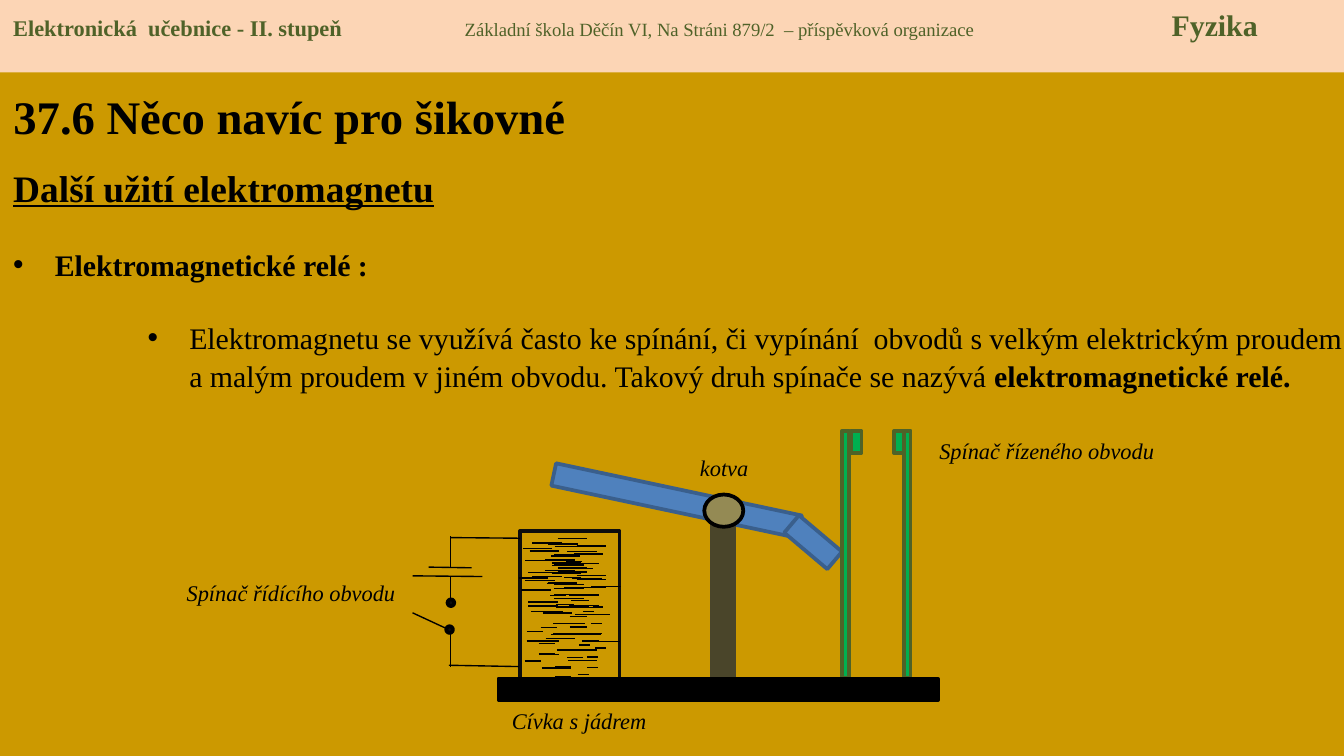
"""Build a physics slide about the electromagnetic relay on a grid of 0.1 inch cells."""
from typing import NamedTuple

from lxml.etree import SubElement
from pptx import Presentation
from pptx.dml.color import RGBColor
from pptx.enum.shapes import MSO_CONNECTOR, MSO_SHAPE
from pptx.enum.text import MSO_ANCHOR, MSO_AUTO_SIZE, PP_ALIGN
from pptx.oxml.ns import qn
from pptx.util import Inches, Pt

RECT = MSO_SHAPE.RECTANGLE
DISC = MSO_SHAPE.FLOWCHART_CONNECTOR
LINE = MSO_CONNECTOR.STRAIGHT
LEFT = PP_ALIGN.LEFT
TOP, MIDDLE = MSO_ANCHOR.TOP, MSO_ANCHOR.MIDDLE
FIXED = MSO_AUTO_SIZE.NONE
COLS, ROWS = 100, 56.25
FONT = "Times New Roman"
BLACK, INK, GOLD, PEACH = "000000", "0D0D0D", "CC9900", "FCD5B5"
BLUE, NAVY, GREEN, MOSS = "4F81BD", "3A5F8C", "00B050", "4F6228"
BROWN, KHAKI = "4A452A", "948A54"


class Part(NamedTuple):
    box: tuple
    fill: str
    edge: str
    turn: float = 0
    kind: int = RECT


class Wind(NamedTuple):
    col: float
    row: float
    span: float = 2.2


class Label(NamedTuple):
    text: str
    box: tuple


PARTS = [
    Part((41, 36.4, 18.7, 1.7), BLUE, NAVY, 12),
    Part((47.1, 43, 13.4, 1.6), BROWN, BROWN, 90),
    Part((58.4, 39.5, 4.2, 1.7), BLUE, NAVY, 40.2),
    Part((36.9, 41.3, 11, 7.4), GOLD, INK, 270),
    Part((66.5, 32.1, 0.8, 1.6), GREEN, MOSS),
    Part((53.7, 41, 18.4, 0.5), GREEN, MOSS, 90),
    Part((58.3, 41, 18.4, 0.5), GREEN, MOSS, 90),
    Part((63.3, 32.1, 0.8, 1.6), GREEN, MOSS),
    Part((37.1, 50.5, 32.7, 1.6), BLACK, BLACK),
    Part((52.4, 36.8, 2.9, 2.4), KHAKI, BLACK, 0, DISC),
]
POLES = [
    Part((33.2, 46.6, 0.5, 0.5), INK, BLACK, 0, DISC),
    Part((33.3, 44.6, 0.5, 0.5), INK, BLACK, 0, DISC),
]
WINDS = [
    Wind(39.6, 40.4), Wind(39.7, 45.5), Wind(39.6, 42.9), Wind(39.4, 41),
    Wind(39.6, 42.6), Wind(40.6, 47.5), Wind(40.4, 48.7, 1.2),
    Wind(39.1, 41.7), Wind(41.1, 42.1, 1.2), Wind(40.7, 43.4),
    Wind(41.4, 45, 1.3), Wind(39.2, 47, 1.2), Wind(39.5, 45.5),
    Wind(38.9, 40.8), Wind(43.1, 48, 0.8), Wind(43.4, 45.5, 0.8),
]
STEPS = [(0, 0), (0.75, 1.65), (0.75, 0.88), (1.5, 0.22), (-0.14, 2.2), (0.86, -0.33)]
WIRES = [
    (49.6, 50.4, 51.8, 50.4), (42.9, 43.7, 45.1, 43.7),
    (33.5, 46.9, 30.7, 45.6), (33.5, 42.2, 33.5, 39.9),
    (33.5, 49.6, 33.5, 46.8), (33.5, 40, 38.7, 40.05),
    (33.4, 49.5, 38.6, 49.6), (31.9, 42.2, 35.1, 42.25),
    (30.7, 42.85, 35.9, 42.9), (33.5, 44.6, 33.5, 42.9),
]
LABELS = [
    Label("Cívka s jádrem", (37.1, 52.1, 12.2, 3)),
    Label("kotva", (51.1, 33.3, 5.7, 3)),
    Label("Spínač řídícího obvodu", (12.9, 42.6, 17.8, 3)),
    Label("Spínač řízeného obvodu", (68.9, 32, 18.2, 3)),
]


def grid(*cells: float) -> list:
    return [Inches(cell / 10) for cell in cells]


def paint(code: str) -> RGBColor:
    return RGBColor.from_string(code)


def put(par, text: str, size=16, color=BLACK, bold=False, slant=False, under=False) -> None:
    run = par.add_run()
    run.text = text
    font = run.font
    font.name, font.size = FONT, Pt(size)
    font.bold, font.italic, font.underline = bold, slant, under
    font.color.rgb = paint(color)


def bullet(par, col: float, level: int = 0) -> None:
    par.level = level
    par.space_before, par.line_spacing = Pt(19), 1.05
    props = par._p.get_or_add_pPr()
    props.set("marL", str(Inches(col / 10)))
    props.set("indent", str(Inches(-0.31)))
    SubElement(props, qn("a:buFont")).set("typeface", "Arial")
    SubElement(props, qn("a:buChar")).set("char", "•")


def draw(shapes, part: Part):
    shape = shapes.add_shape(part.kind, *grid(*part.box))
    shape.shadow.inherit = False
    shape.rotation = part.turn
    shape.fill.solid()
    shape.fill.fore_color.rgb = paint(part.fill)
    if part.edge:
        shape.line.color.rgb = paint(part.edge)
        shape.line.width = Pt(2)
    else:
        shape.line.fill.background()
    return shape


def wire(shapes, ends: tuple) -> None:
    link = shapes.add_connector(LINE, *grid(*ends))
    link.line.color.rgb = paint(BLACK)
    link.line.width = Pt(0.75)
    SubElement(link._element.spPr, qn("a:effectLst"))


def coil(shapes, wind: Wind) -> None:
    for right, down in STEPS:
        col, row = wind.col + right * wind.span, wind.row + down
        wire(shapes, (col, row, col + wind.span, row))


def frame(shapes, box: tuple, wrap: bool):
    text = shapes.add_textbox(*grid(*box)).text_frame
    text.word_wrap = wrap
    return text


def head(slide) -> None:
    title = slide.shapes.title
    title.left, title.top, title.width, title.height = grid(0, 5.4, 46.9, 6.5)
    text = title.text_frame
    text.auto_size, text.vertical_anchor = FIXED, MIDDLE
    par = text.paragraphs[0]
    par.alignment = LEFT
    put(par, "37.6 Něco navíc pro šikovné", size=25, bold=True)

    text = draw(slide.shapes, Part((0, 0, COLS, 5.4), PEACH, "")).text_frame
    text.vertical_anchor = TOP
    par = text.paragraphs[0]
    par.alignment = LEFT
    tabs = SubElement(par._p.get_or_add_pPr(), qn("a:tabLst"))
    for stop in grid(33.6, 86.2):
        tab = SubElement(tabs, qn("a:tab"))
        tab.set("pos", str(stop))
        tab.set("algn", "l")
    put(par, "Elektronická  učebnice - II. stupeň\t", size=12, color=MOSS, bold=True)
    put(par, "Základní škola Děčín VI, Na Stráni 879/2  – příspěvková organizace\t",
        size=10, color=MOSS)
    put(par, "Fyzika", color=MOSS, bold=True)


def body(slide) -> None:
    text = frame(slide.shapes, (0, 11.6, 101.1, 20.5), True)
    par = text.paragraphs[0]
    par.line_spacing = 1.05
    put(par, "Další užití elektromagnetu", size=20, bold=True, under=True)
    par = text.add_paragraph()
    bullet(par, 3.1)
    put(par, "Elektromagnetické relé :", bold=True)
    par = text.add_paragraph()
    bullet(par, 13.1, 2)
    put(par, "Elektromagnetu se využívá často ke spínání, či vypínání  obvodů s velkým "
        "elektrickým proudem a malým proudem v jiném obvodu. Takový druh spínače se nazývá ")
    put(par, "elektromagnetické relé.", bold=True)


def relay(slide) -> None:
    shapes = slide.shapes.add_group_shape().shapes
    for part in PARTS:
        draw(shapes, part)
    for wind in WINDS:
        coil(shapes, wind)
    for ends in WIRES:
        wire(shapes, ends)
    for pole in POLES:
        draw(shapes, pole)
    for label in LABELS:
        text = frame(shapes, label.box, False)
        put(text.paragraphs[0], label.text, size=12, slant=True)


def main() -> None:
    deck = Presentation()
    deck.slide_width, deck.slide_height = grid(COLS, ROWS)
    slide = deck.slides.add_slide(deck.slide_layouts[5])
    slide.background.fill.solid()
    slide.background.fill.fore_color.rgb = paint(GOLD)
    head(slide)
    body(slide)
    relay(slide)
    deck.save("out.pptx")


if __name__ == "__main__":
    main()
